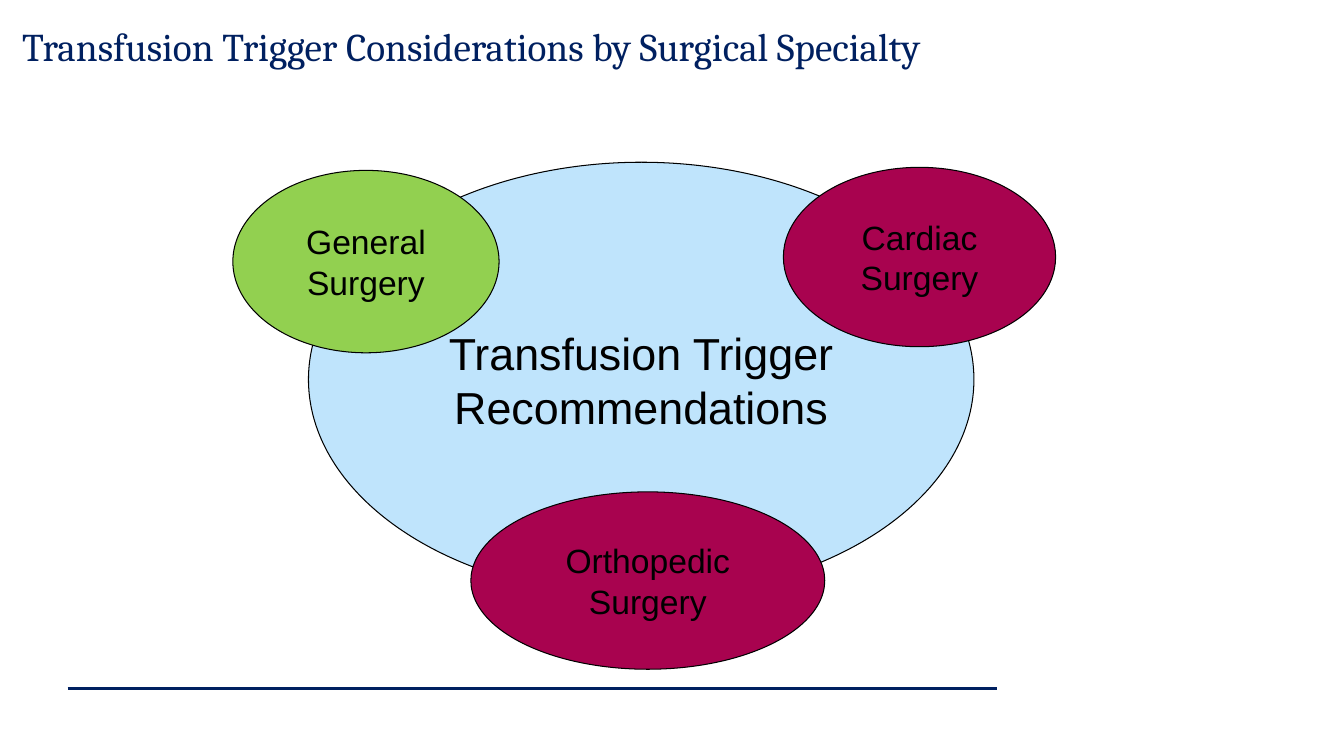
"""Build the slide on transfusion triggers by surgical specialty."""
from lxml import etree
from pptx import Presentation
from pptx import util as u
from pptx.dml import color
from pptx.enum import shapes, text
from pptx.oxml import ns

HUES = {"navy": "002060", "sky": "BFE4FC", "green": "92D050", "wine": "A8034F", "black": "000000"}


def rgb(name):
    return color.RGBColor.from_string(HUES[name])


def write(frame, words, size, font="Arial", hue="black", align=text.PP_ALIGN.CENTER,
          anchor=text.MSO_ANCHOR.MIDDLE):
    frame.word_wrap = True
    frame.vertical_anchor = anchor
    para = frame.paragraphs[0]
    para.alignment = align
    run = para.add_run()
    run.text = words
    run.font.name = font
    run.font.size = u.Pt(size)
    run.font.color.rgb = rgb(hue)


deck = Presentation()
deck.slide_width, deck.slide_height = u.Inches(13.33), u.Inches(7.5)
slide = deck.slides.add_slide(deck.slide_layouts[5])

rule = slide.shapes.add_connector(
    shapes.MSO_CONNECTOR.STRAIGHT, u.Inches(0.67), u.Inches(6.83), u.Inches(9.89), u.Inches(6.83))
rule.line.color.rgb = rgb("navy")
rule.line.width = u.Pt(2)
etree.SubElement(rule._element.spPr, ns.qn("a:effectLst"))

title = slide.shapes.title
title.left, title.top = u.Inches(0.12), u.Inches(0.17)
title.width, title.height = u.Inches(12), u.Inches(0.57)
write(title.text_frame, "Transfusion Trigger Considerations by Surgical Specialty", 28,
      font="Cambria", hue="navy", align=text.PP_ALIGN.LEFT, anchor=text.MSO_ANCHOR.BOTTOM)
title.text_frame.auto_size = text.MSO_AUTO_SIZE.SHAPE_TO_FIT_TEXT

OVALS = [
    ("Transfusion Trigger Recommendations", "sky", 32, (3.06, 1.61, 6.6, 4.31)),
    ("General Surgery", "green", 24, (2.31, 1.69, 2.64, 1.81)),
    ("Cardiac Surgery", "wine", 24, (7.77, 1.66, 2.7, 1.78)),
    ("Orthopedic Surgery", "wine", 24, (4.67, 4.88, 3.51, 1.76)),
]
for words, hue, size, box in OVALS:
    oval = slide.shapes.add_shape(shapes.MSO_SHAPE.OVAL, *map(u.Inches, box))
    oval.shadow.inherit = False
    oval.fill.solid()
    oval.fill.fore_color.rgb = rgb(hue)
    oval.line.color.rgb = rgb("black")
    oval.line.width = u.Pt(0.75)
    write(oval.text_frame, words, size)

deck.save("out.pptx")
